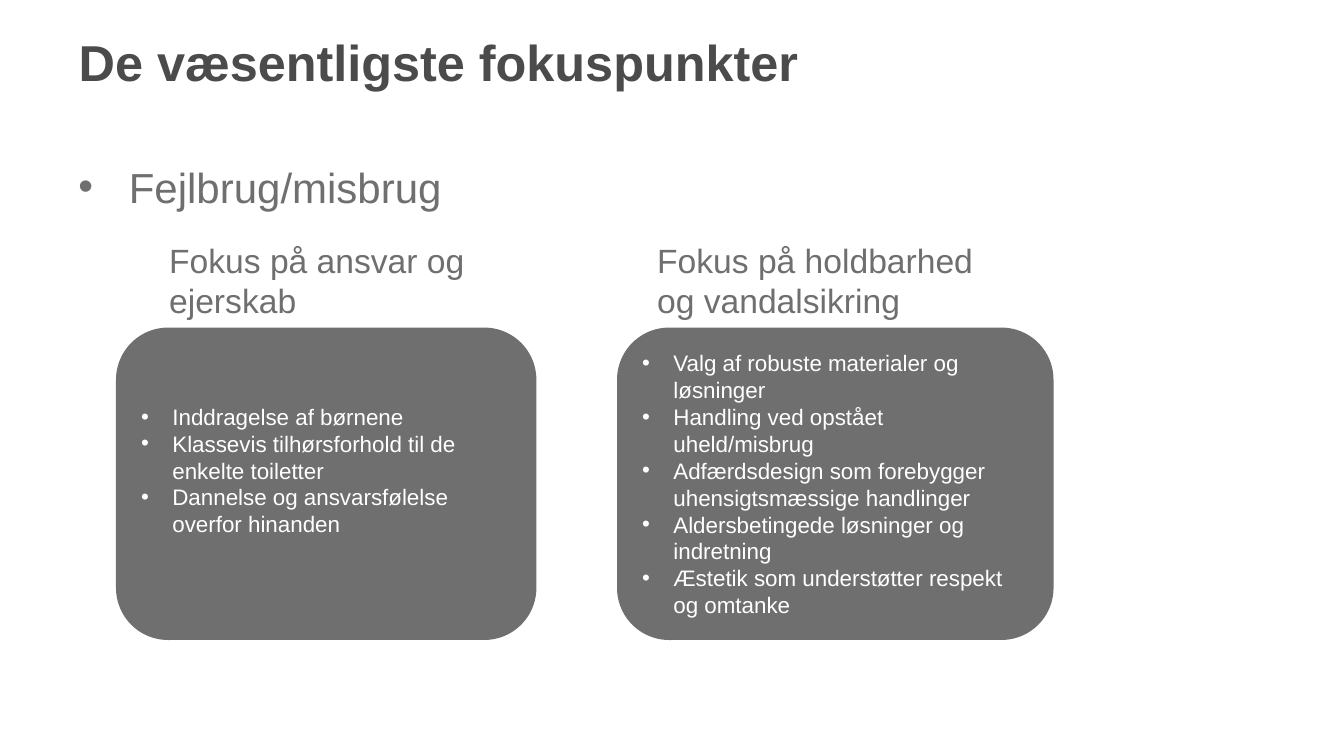
from dataclasses import dataclass

from lxml import etree
from pptx import Presentation
from pptx.dml.color import RGBColor
from pptx.enum.shapes import MSO_SHAPE
from pptx.enum.text import MSO_ANCHOR, MSO_AUTO_SIZE, PP_ALIGN
from pptx.oxml.ns import qn
from pptx.slide import Slide
from pptx.text.text import TextFrame
from pptx.util import Inches, Length

ROUNDED = MSO_SHAPE.ROUNDED_RECTANGLE
MIDDLE, TOP = MSO_ANCHOR.MIDDLE, MSO_ANCHOR.TOP
NO_FIT = MSO_AUTO_SIZE.NONE
LEFT = PP_ALIGN.LEFT
TITLE_ONLY = 5
SLIDE_WIDTH, SLIDE_HEIGHT = Inches(13.33), Inches(7.5)


@dataclass(frozen=True)
class TextStyle:
    size: int
    color: str
    bold: bool = False
    indent: float = 0


@dataclass(frozen=True)
class Theme:
    font: str = "Arial"
    card_fill: str = "706F6F"
    title: TextStyle = TextStyle(36, "4C4B4B", bold=True)
    topic: TextStyle = TextStyle(30, "706F6F", indent=0.5)
    heading: TextStyle = TextStyle(24, "706F6F")
    point: TextStyle = TextStyle(16, "FFFFFF", indent=0.31)


@dataclass(frozen=True)
class Area:
    left: float
    top: float
    width: float
    height: float

    def lengths(self) -> tuple[Length, Length, Length, Length]:
        return (
            Length(round(SLIDE_WIDTH * self.left / 100)),
            Length(round(SLIDE_HEIGHT * self.top / 100)),
            Length(round(SLIDE_WIDTH * self.width / 100)),
            Length(round(SLIDE_HEIGHT * self.height / 100)),
        )


@dataclass(frozen=True)
class FocusCard:
    heading: str
    heading_left: float
    left: float
    width: float
    points: tuple[str, ...]
    bottom_inset: float = 0.05


THEME = Theme()
TITLE_AREA = Area(5.1, 2.93, 88.97, 10.27)
TOPIC_AREA = Area(5.1, 20.67, 88.97, 10.53)
HEADING_TOP, HEADING_WIDTH, HEADING_HEIGHT = 31.07, 25.28, 6.27
CARD_TOP, CARD_HEIGHT = 43.33, 41.33

FOCUS_CARDS = (
    FocusCard(
        "Fokus på ansvar og ejerskab", 11.85, 8.63, 31.28,
        (
            "Inddragelse af børnene",
            "Klassevis tilhørsforhold til de enkelte toiletter",
            "Dannelse og ansvarsfølelse overfor hinanden",
        ),
        bottom_inset=0.32,
    ),
    FocusCard(
        "Fokus på holdbarhed og vandalsikring", 48.16, 45.91, 32.48,
        (
            "Valg af robuste materialer og løsninger",
            "Handling ved opstået uheld/misbrug",
            "Adfærdsdesign som forebygger uhensigtsmæssige handlinger",
            "Aldersbetingede løsninger og indretning",
            "Æstetik som understøtter respekt og omtanke",
        ),
    ),
)


def write(frame: TextFrame, lines: tuple[str, ...], style: TextStyle,
          anchor: MSO_ANCHOR = TOP) -> None:
    frame.text = "\n".join(lines)
    frame.word_wrap = True
    frame.auto_size = NO_FIT
    frame.vertical_anchor = anchor
    for paragraph in frame.paragraphs:
        paragraph.alignment = LEFT
        if style.indent:
            properties = paragraph._p.get_or_add_pPr()
            properties.set("marL", str(Inches(style.indent)))
            properties.set("indent", str(-Inches(style.indent)))
            etree.SubElement(properties, qn("a:buFont"), typeface=THEME.font)
            etree.SubElement(properties, qn("a:buChar"), char="•")
        for run in paragraph.runs:
            run.font.name = THEME.font
            run.font.size = Length(style.size * 12700)
            run.font.bold = style.bold
            run.font.color.rgb = RGBColor.from_string(style.color)


def add_label(slide: Slide, area: Area, wording: str, style: TextStyle) -> None:
    label = slide.shapes.add_textbox(*area.lengths())
    write(label.text_frame, (wording,), style)


def add_focus_card(slide: Slide, card: FocusCard) -> None:
    area = Area(card.left, CARD_TOP, card.width, CARD_HEIGHT)
    panel = slide.shapes.add_shape(ROUNDED, *area.lengths())
    panel.shadow.inherit = False
    panel.fill.solid()
    panel.fill.fore_color.rgb = RGBColor.from_string(THEME.card_fill)
    panel.line.fill.background()
    write(panel.text_frame, card.points, THEME.point, MIDDLE)
    panel.text_frame.margin_bottom = Inches(card.bottom_inset)
    heading_area = Area(card.heading_left, HEADING_TOP, HEADING_WIDTH, HEADING_HEIGHT)
    add_label(slide, heading_area, card.heading, THEME.heading)


def main() -> None:
    deck = Presentation()
    deck.slide_width, deck.slide_height = SLIDE_WIDTH, SLIDE_HEIGHT
    slide = deck.slides.add_slide(deck.slide_layouts[TITLE_ONLY])
    title = slide.shapes.title
    title.left, title.top, title.width, title.height = TITLE_AREA.lengths()
    write(title.text_frame, ("De væsentligste fokuspunkter",), THEME.title, MIDDLE)
    add_label(slide, TOPIC_AREA, "Fejlbrug/misbrug", THEME.topic)
    for card in FOCUS_CARDS:
        add_focus_card(slide, card)
    deck.save("out.pptx")


if __name__ == "__main__":
    main()
